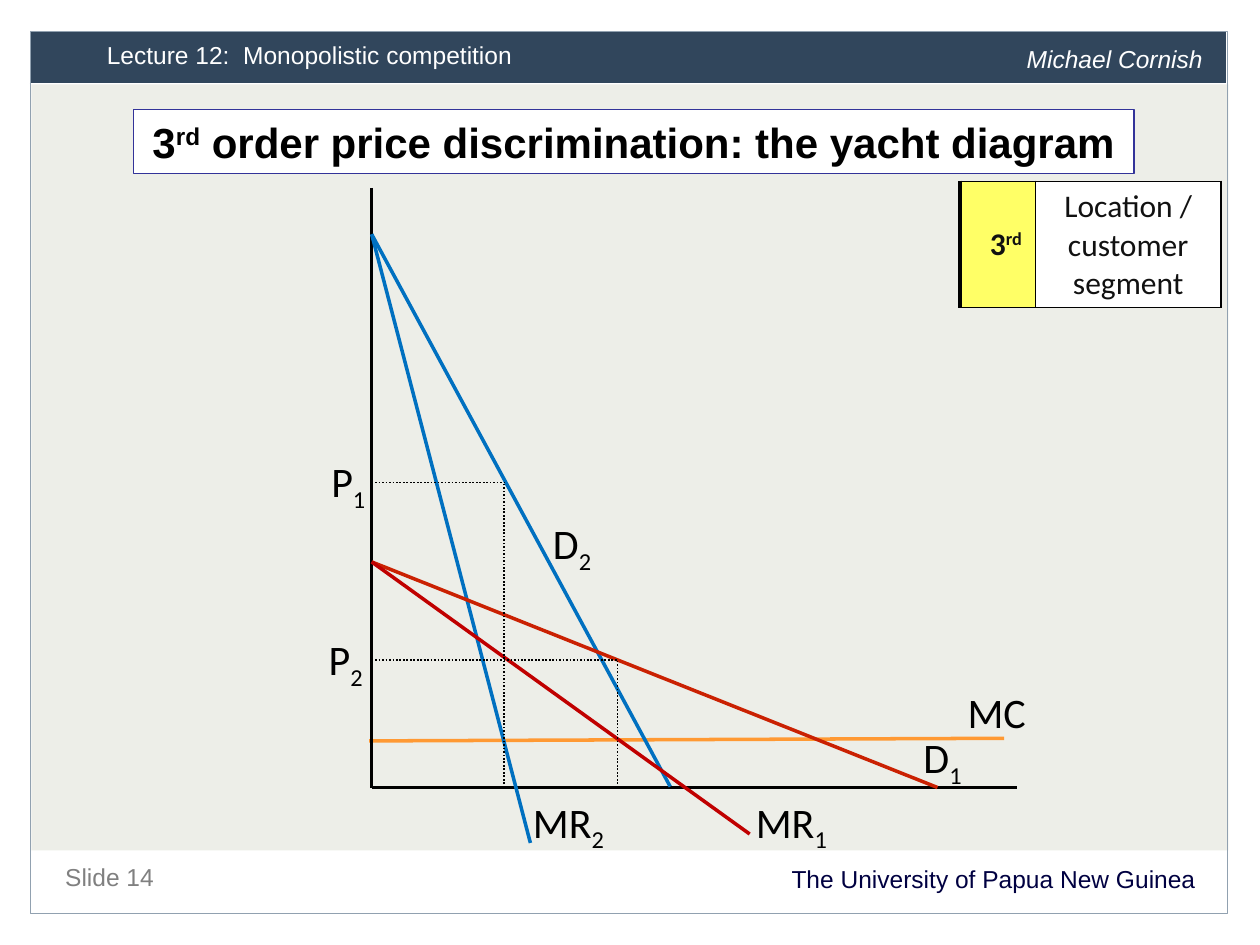
from lxml import etree
from pptx import Presentation
from pptx import util as u
from pptx.dml.color import RGBColor
from pptx.enum import dml, shapes, text
from pptx.oxml import ns

COLOURS = {
    "paper": "EDEEE8", "banner": "31465C", "frame": "91A1B0", "white": "FFFFFF",
    "black": "000000", "navy": "000041", "grey": "808080", "title edge": "333399",
    "cost": "FF9933", "blue": "0070C0", "red": "CA2102", "dark red": "C00000",
    "yellow": "FFFF66", "ink": "111111",
}
ALIGN = text.PP_ALIGN
SUPER, SUB = 30, -25


def colour(name):
    return RGBColor.from_string(COLOURS[name])


class SlideBuilder:
    def __init__(self, page):
        self.page = page

    def add_text(self, frame, runs, size, font="Arial", ink="black", bold=False,
                 italic=False, align=ALIGN.LEFT, spacing=None):
        """Fill the first paragraph; runs are (wording, baseline percent) pairs."""
        para = frame.paragraphs[0]
        para.alignment = align
        if spacing:
            para.line_spacing = u.Pt(spacing)
        for wording, baseline in runs:
            span = para.add_run()
            span.text = wording
            span.font.size = u.Pt(size)
            span.font.name = font
            span.font.bold = bold
            span.font.italic = italic
            span.font.color.rgb = colour(ink)
            if baseline:
                span._r.get_or_add_rPr().set("baseline", str(baseline * 1000))

    def rectangle(self, place, fill=None, edge=None, width=0.75):
        box = self.page.shapes.add_shape(shapes.MSO_SHAPE.RECTANGLE, *map(u.Pt, place))
        box.shadow.inherit = False
        if fill:
            box.fill.solid()
            box.fill.fore_color.rgb = colour(fill)
        else:
            box.fill.background()
        if edge:
            box.line.color.rgb = colour(edge)
            box.line.width = u.Pt(width)
        else:
            box.line.fill.background()
        return box

    def label(self, place, runs, size=14, **style):
        box = self.page.shapes.add_textbox(*map(u.Pt, place))
        box.text_frame.word_wrap = True
        self.add_text(box.text_frame, runs, size, **style)

    def line(self, start, end, ink="black", width=2, dotted=False):
        line = self.page.shapes.add_connector(
            shapes.MSO_CONNECTOR.STRAIGHT, *map(u.Pt, (*start, *end)))
        line.line.color.rgb = colour(ink)
        line.line.width = u.Pt(width)
        if dotted:
            line.line.dash_style = dml.MSO_LINE.ROUND_DOT
        etree.SubElement(line._element.spPr, ns.qn("a:effectLst"))

    def guide(self, origin, point):
        """Dotted lines from a price and quantity point to both axes."""
        for foot in ((point[0], origin[1]), (origin[0], point[1])):
            self.line(foot, point, width=1, dotted=True)

    def border(self, cell, widths):
        """Black cell edges; widths are left, right, top, bottom."""
        properties = cell._tc.get_or_add_tcPr()
        for index, (side, width) in enumerate(zip("LRTB", widths)):
            edge = etree.Element(ns.qn(f"a:ln{side}"), w=str(u.Pt(width)))
            fill = etree.SubElement(edge, ns.qn("a:solidFill"))
            etree.SubElement(fill, ns.qn("a:srgbClr"), val=COLOURS["black"])
            properties.insert(index, edge)

    def table(self, place, columns, cells):
        """One row; cells are (runs, fill, bold, align, border widths)."""
        grid = self.page.shapes.add_table(1, len(columns), *map(u.Pt, place)).table
        grid.first_row = grid.horz_banding = False
        for index, (runs, fill, bold, align, widths) in enumerate(cells):
            grid.columns[index].width = u.Pt(columns[index])
            cell = grid.cell(0, index)
            cell.vertical_anchor = text.MSO_ANCHOR.MIDDLE
            cell.margin_left = cell.margin_right = u.Pt(7.9)
            cell.fill.solid()
            cell.fill.fore_color.rgb = colour(fill)
            self.add_text(cell.text_frame, runs, 18, "Calibri", "ink", bold, align=align)
            self.border(cell, widths)


def main():
    deck = Presentation()
    deck.slide_width, deck.slide_height = u.Pt(720), u.Pt(540)
    slide = SlideBuilder(deck.slides.add_slide(deck.slide_layouts[6]))

    slide.rectangle((18, 48.2, 684, 437.8), "paper")
    slide.rectangle((16.6, 17.3, 684, 30.2), "banner", "white", 0.5)
    slide.label((30.2, 491.8, 660.2, 23), [("The University of Papua New Guinea", 0)],
                ink="navy", align=ALIGN.RIGHT, spacing=15)
    slide.label((30.2, 486, 311.8, 24.5), [("Slide 14", 0)], ink="grey", spacing=20)
    slide.label((54, 18, 441.4, 26.6), [("Lecture 12:  Monopolistic competition", 0)],
                ink="white", spacing=18)
    slide.rectangle((17.3, 18, 684, 504), edge="frame")
    slide.label((579.6, 20.2, 118, 26.6), [("Michael Cornish", 0)],
                ink="white", italic=True, spacing=18)

    title = slide.rectangle((76.3, 62.6, 571.7, 36.7), "white", "title edge")
    title.text_frame.word_wrap = False
    slide.add_text(title.text_frame,
                   [("3", 0), ("rd", SUPER),
                    (" order price discrimination: the yacht diagram", 0)],
                   24, bold=True, align=ALIGN.CENTER)

    origin = (212.4, 450)
    high_choke, low_choke = (origin[0], 133.9), (origin[0], 321.1)
    slide.line((211, 423.4), (573.8, 421.9), "cost")
    slide.line((origin[0], 107.3), origin)
    slide.line(origin, (581, origin[1]))
    for start, end, ink in (
        (high_choke, (303.1, 481.7), "blue"),
        (high_choke, (383, 449.5), "blue"),
        (low_choke, (535.7, 450), "red"),
        (low_choke, (428.4, 476.6), "dark red"),
    ):
        slide.line(start, end, ink)
    for point in ((288, 275.8), (352.8, 377.3)):
        slide.guide(origin, point)

    for left, top, width, letters, index in (
        (520.6, 414.7, 39.6, "D", "1"),
        (297.4, 451.4, 56.9, "MR", "2"),
        (424.8, 451.4, 56.9, "MR", "1"),
        (182.2, 257, 39.6, "P", "1"),
        (180.7, 358.6, 39.6, "P", "2"),
        (545.8, 388.8, 56.9, "MC", ""),
        (308.9, 292.3, 39.6, "D", "2"),
    ):
        runs = [(letters, 0)] + ([(index, SUB)] if index else [])
        slide.label((left, top, width, 33.1), runs, 24, font="Calibri")

    slide.table((548.6, 103.7, 149, 72), (43.2, 105.8), (
        ([("3", 0), ("rd", SUPER)], "yellow", True, ALIGN.RIGHT, (2.25, 1, 1, 1)),
        ([("Location / customer segment", 0)], "white", False, ALIGN.CENTER,
         (1, 1, 1, 1)),
    ))
    deck.save("out.pptx")


if __name__ == "__main__":
    main()
